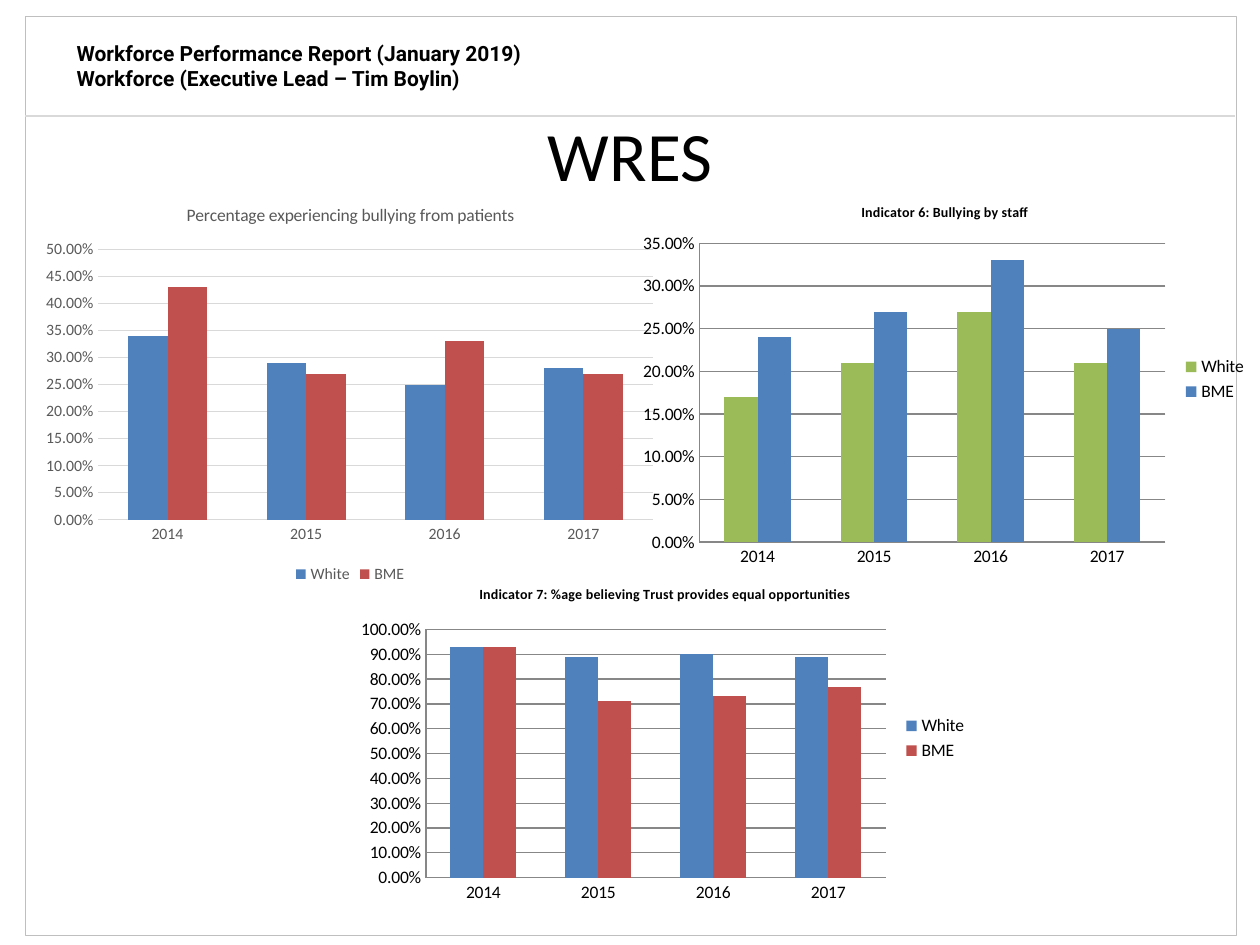
from dataclasses import dataclass

from lxml.etree import SubElement
from pptx import Presentation
from pptx.chart.data import CategoryChartData
from pptx.dml.color import RGBColor
from pptx.enum.chart import XL_CHART_TYPE as Kind, XL_LEGEND_POSITION as Side, XL_TICK_MARK as Tick
from pptx.enum.shapes import MSO_CONNECTOR, MSO_SHAPE
from pptx.enum.text import MSO_ANCHOR, MSO_AUTO_SIZE, PP_ALIGN
from pptx.oxml.ns import qn
from pptx.util import Inches, Pt

YEARS = ("2014", "2015", "2016", "2017")
BLUE, RED, GREEN = "4F81BD", "C0504D", "9BBB59"
BLACK, GREY = "000000", "595959"


@dataclass
class Bars:
    title: str
    box: tuple      # left, top, width, height in inches
    plot: tuple     # x, y, w, h as shares of the chart
    white: tuple
    bme: tuple
    fills: tuple
    top: float
    step: float
    side: Side = Side.RIGHT
    head: int = 8
    size: int = 10
    color: str = BLACK
    grid: str = "878787"
    bold: bool = True
    lines: bool = True


CHARTS = (
    Bars("Percentage experiencing bullying from patients",
         (0.28, 1.47, 5, 3.2), (0.1, 0.16, 0.88, 0.67),
         (0.34, 0.29, 0.25, 0.28), (0.43, 0.27, 0.33, 0.27), (BLUE, RED),
         0.5, 0.05, Side.BOTTOM, 10, 9, GREY, "D9D9D9", False, False),
    Bars("Indicator 6: Bullying by staff",
         (5, 1.47, 5, 3.08), (0.11, 0.15, 0.74, 0.77),
         (0.17, 0.21, 0.27, 0.21), (0.24, 0.27, 0.33, 0.25), (GREEN, BLUE),
         0.35, 0.05),
    Bars("Indicator 7: %age believing Trust provides equal opportunities",
         (2.78, 4.51, 5, 2.7), (0.12, 0.18, 0.73, 0.73),
         (0.93, 0.89, 0.9, 0.89), (0.93, 0.71, 0.73, 0.77), (BLUE, RED),
         1, 0.1),
)


def rgb(code: str) -> RGBColor:
    return RGBColor.from_string(code)


def style(font, size: float, color: str = BLACK, bold: bool = False, name: str = "Calibri") -> None:
    font.name, font.size, font.bold = name, Pt(size), bold
    font.color.rgb = rgb(color)


def stroke(line, color: str, width: float) -> None:
    line.color.rgb, line.width = rgb(color), Pt(width)


def set_plot(chart, shares: tuple) -> None:
    """Fix the inner plot area at the given shares of the chart."""
    area = chart.plots[0]._element.getparent()
    for old in area.findall(qn("c:layout")):
        area.remove(old)
    layout = SubElement(area, qn("c:layout"))
    area.insert(0, layout)
    manual = SubElement(layout, qn("c:manualLayout"))
    tags = ("layoutTarget", "xMode", "yMode", "x", "y", "w", "h")
    for tag, val in zip(tags, ("inner", "edge", "edge", *shares)):
        SubElement(manual, qn(f"c:{tag}")).set("val", str(val))


def add_bars(slide, bars: Bars) -> None:
    data = CategoryChartData(number_format="0%")
    data.categories = YEARS
    data.add_series("White", bars.white)
    data.add_series("BME", bars.bme)
    box = map(Inches, bars.box)
    chart = slide.shapes.add_chart(Kind.COLUMN_CLUSTERED, *box, data).chart
    style(chart.font, bars.size, bars.color)
    set_plot(chart, bars.plot)

    chart.has_title = True
    chart.chart_title.include_in_layout = False
    para = chart.chart_title.text_frame.paragraphs[0]
    para.text = bars.title
    style(para.font, bars.head, bars.color, bars.bold)

    chart.has_legend = True
    chart.legend.position = bars.side
    chart.legend.include_in_layout = False
    style(chart.legend.font, bars.size, bars.color)

    plot = chart.plots[0]
    plot.gap_width, plot.overlap, plot.vary_by_categories = 150, 0, False
    for series, fill in zip(plot.series, bars.fills):
        series.format.fill.solid()
        series.format.fill.fore_color.rgb = rgb(fill)
        series.invert_if_negative = False

    values = chart.value_axis
    for axis in (chart.category_axis, values):
        axis.major_tick_mark = axis.minor_tick_mark = Tick.NONE
        style(axis.tick_labels.font, bars.size, bars.color)
        if bars.lines:
            stroke(axis.format.line, bars.grid, 0.75)
        else:
            axis.format.line.fill.background()
    values.minimum_scale, values.maximum_scale = 0, bars.top
    values.major_unit = bars.step
    values.has_major_gridlines = True
    stroke(values.major_gridlines.format.line, bars.grid, 0.75)
    values.tick_labels.number_format = "0.00%"
    values.tick_labels.number_format_is_linked = False


def add_frame(slide) -> None:
    """Draw the page border, the header text and the rule below it."""
    shapes = slide.shapes
    head = shapes.add_textbox(Inches(0.51), Inches(0.27), Inches(5), Inches(0.5)).text_frame
    head.word_wrap = True
    para = head.paragraphs[0]
    para.text = "Workforce Performance Report (January 2019)\vWorkforce (Executive Lead – Tim Boylin)"
    style(para.font, 12, bold=True, name="Roboto")

    edge = shapes.add_shape(MSO_SHAPE.RECTANGLE, Inches(0.2), Inches(0.13), Inches(9.61), Inches(7.29))
    edge.shadow.inherit = False
    edge.fill.background()
    stroke(edge.line, "BFBFBF", 0.25)

    rule = shapes.add_connector(MSO_CONNECTOR.STRAIGHT, Inches(0.2), Inches(0.92), Inches(9.8), Inches(0.92))
    stroke(rule.line, "D9D9D9", 0.75)
    SubElement(rule._element.spPr, qn("a:effectLst"))


def set_title(slide, text: str) -> None:
    title = slide.shapes.title
    title.left, title.top = Inches(0.5), Inches(1.47)
    title.width, title.height = Inches(9), Inches(0.08)
    frame = title.text_frame
    frame.auto_size = MSO_AUTO_SIZE.NONE
    frame.vertical_anchor = MSO_ANCHOR.BOTTOM
    frame.margin_top = frame.margin_bottom = 0
    para = frame.paragraphs[0]
    para.text, para.alignment = text, PP_ALIGN.CENTER
    style(para.font, 39.6)


def main() -> None:
    deck = Presentation()
    deck.slide_width, deck.slide_height = Inches(10), Inches(7.5)
    slide = deck.slides.add_slide(deck.slide_layouts[5])
    add_frame(slide)
    set_title(slide, "WRES")
    for bars in CHARTS:
        add_bars(slide, bars)
    deck.save("out.pptx")


if __name__ == "__main__":
    main()
